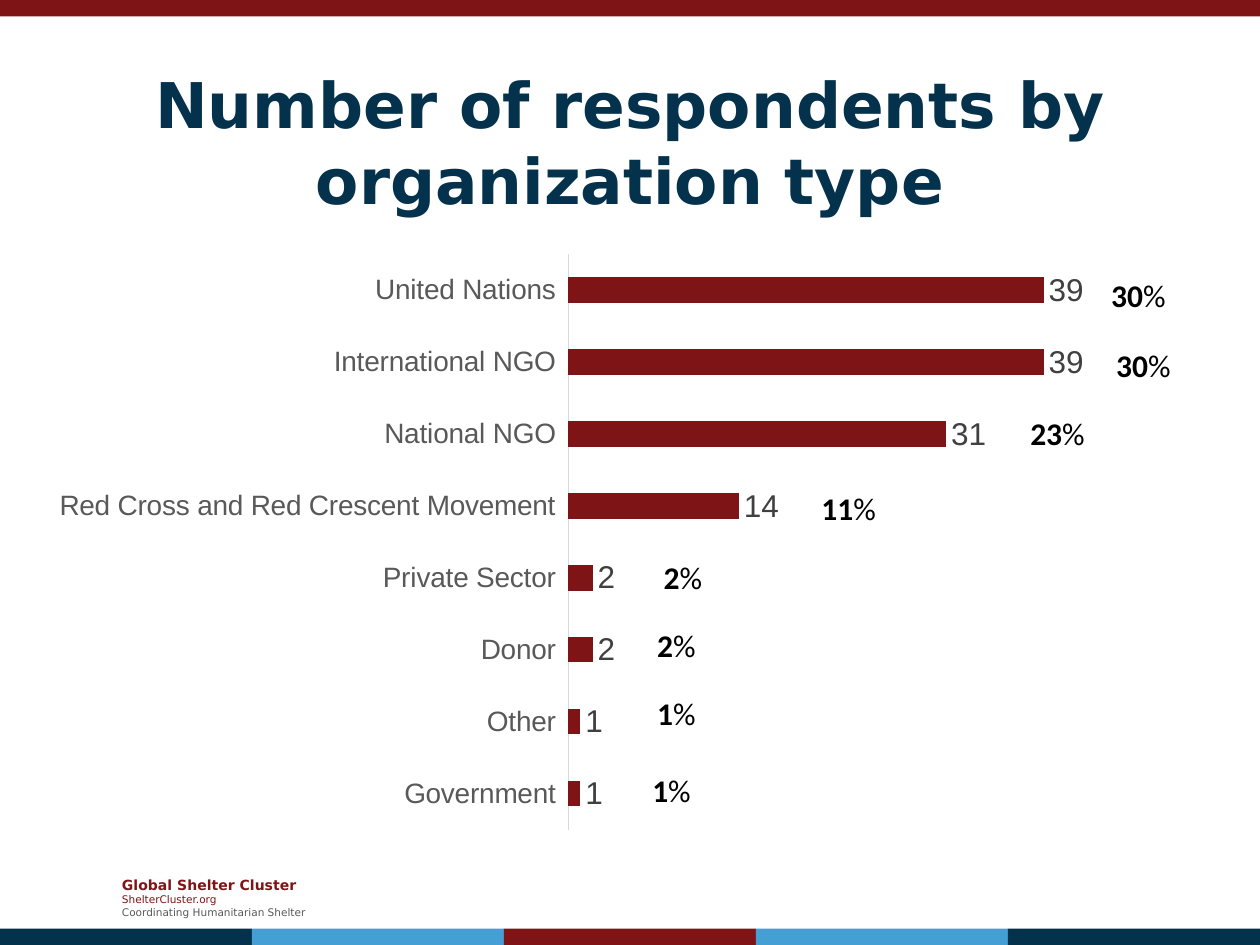
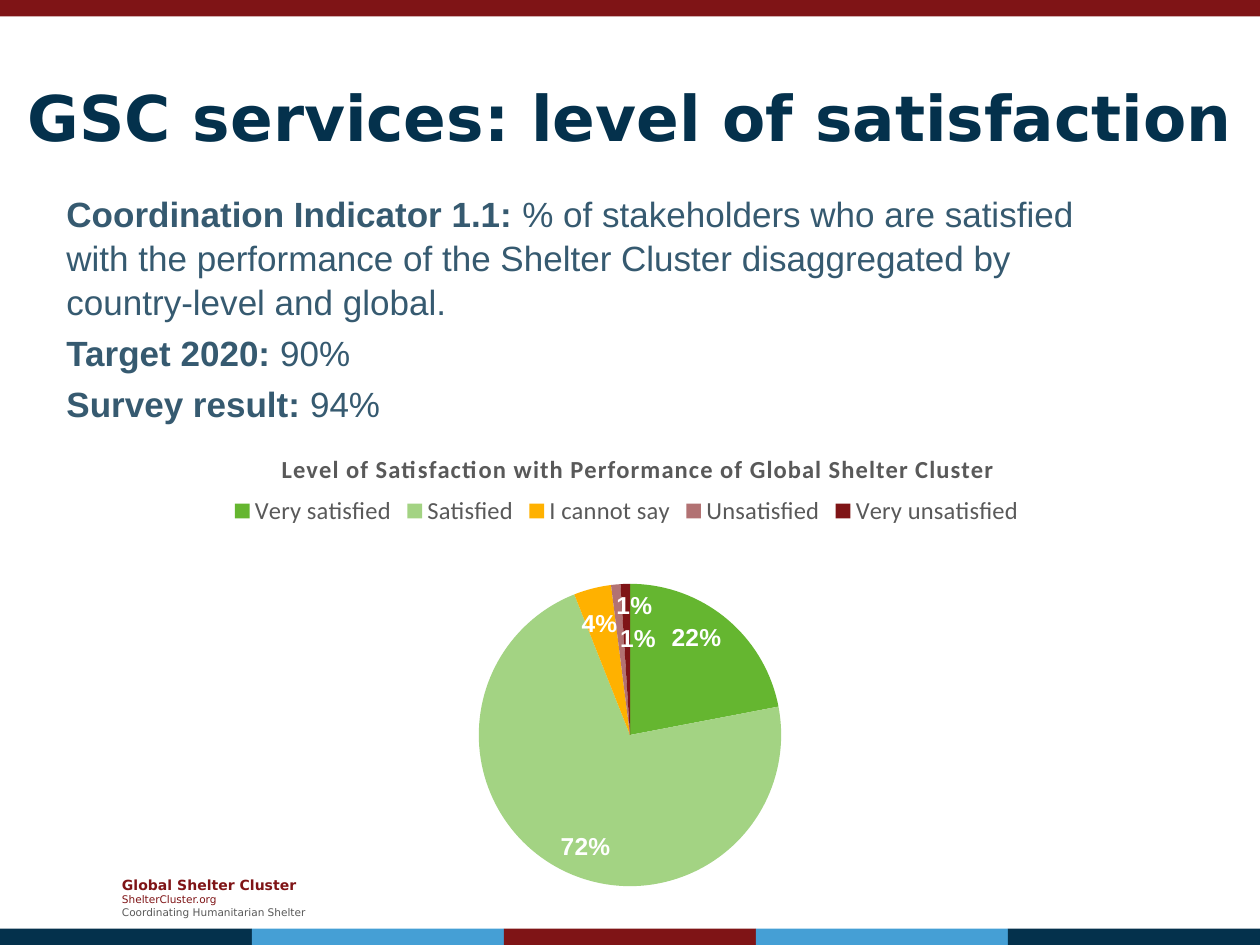
"""Build two survey result slides: respondents by type and level of satisfaction."""
from lxml import etree
from pptx import Presentation
from pptx.chart.data import CategoryChartData
from pptx.dml.color import RGBColor
from pptx.enum.chart import XL_CHART_TYPE, XL_LABEL_POSITION, XL_LEGEND_POSITION, XL_TICK_LABEL_POSITION, XL_TICK_MARK
from pptx.enum.shapes import MSO_SHAPE
from pptx.enum.text import MSO_ANCHOR, PP_ALIGN
from pptx.oxml.ns import qn
from pptx.util import Cm, Pt

BAR, PIE = XL_CHART_TYPE.BAR_CLUSTERED, XL_CHART_TYPE.PIE
OUT_END, IN_END = XL_LABEL_POSITION.OUTSIDE_END, XL_LABEL_POSITION.INSIDE_END
LEGEND_TOP = XL_LEGEND_POSITION.TOP
NO_TICK, LOW = XL_TICK_MARK.NONE, XL_TICK_LABEL_POSITION.LOW
RECT = MSO_SHAPE.RECTANGLE
TOP, MIDDLE = MSO_ANCHOR.TOP, MSO_ANCHOR.MIDDLE
LEFT, CENTER = PP_ALIGN.LEFT, PP_ALIGN.CENTER

COLORS = {
    "red": "7F1416", "navy": "04314C", "sky": "459FD5", "slate": "365A70",
    "grey": "595959", "dark": "404040", "rule": "D9D9D9", "black": "000000",
    "white": "FFFFFF", "green": "65B630", "mint": "A3D383", "amber": "FFB100",
    "rose": "B27273",
}
RGB = {name: RGBColor.from_string(value) for name, value in COLORS.items()}

TITLE = {"name": "DejaVu Sans", "size": Pt(36), "bold": True, "color": "navy"}
ORG = {"name": "DejaVu Sans", "size": Pt(8), "bold": True, "color": "red"}
SITE = {**ORG, "size": Pt(6), "bold": False}
MOTTO = {**SITE, "color": "grey"}
BODY = {"name": "Arial", "size": Pt(20), "bold": False, "color": "slate"}
LEAD = {**BODY, "bold": True}
SHARE = {"name": "Calibri", "size": Pt(18), "bold": True, "color": "black"}
SIGN = {**SHARE, "bold": False}
CHART = {"name": "Calibri", "size": Pt(10), "color": "black"}
CATEGORY = {"name": "Arial", "size": Pt(16), "color": "grey"}
COUNT = {"name": "Arial", "size": Pt(18), "color": "dark"}
LEGEND = {"name": "Calibri", "size": Pt(14), "color": "grey"}
CAPTION = {**LEGEND, "bold": True}
SLICE = {"name": "Arial", "size": Pt(14), "bold": True, "color": "white"}


def style(font, fmt):
    for key, value in fmt.items():
        if key == "color":
            font.color.rgb = RGB[value]
        else:
            setattr(font, key, value)


def place(element, index, **values):
    for old in element.findall(qn("c:layout")):
        element.remove(old)
    layout = etree.Element(qn("c:layout"))
    manual = etree.SubElement(layout, qn("c:manualLayout"))
    for key, value in values.items():
        etree.SubElement(manual, qn(f"c:{key}")).set("val", str(value))
    element.insert(index, layout)


prs = Presentation()
prs.slide_width, prs.slide_height = Cm(25.4), Cm(19.05)
respondents, satisfaction = [prs.slides.add_slide(prs.slide_layouts[6]) for _ in range(2)]

band = 25.4 / 5
bars = [(0, 0, 25.4, "red")]
bars += [(i * band, 18.72, band, color)
         for i, color in enumerate(["navy", "sky", "red", "sky", "navy"])]
for s in prs.slides:
    for x, y, w, color in bars:
        sp = s.shapes.add_shape(RECT, Cm(x), Cm(y), Cm(w), Cm(0.33))
        sp.shadow.inherit = False
        sp.fill.solid()
        sp.fill.fore_color.rgb = RGB[color]
        sp.line.fill.background()

data = CategoryChartData()
data.categories = ["Government", "Other", "Donor", "Private Sector",
                   "Red Cross and Red Crescent Movement", "National NGO",
                   "International NGO", "United Nations"]
data.add_series("Series 1", [1, 1, 2, 2, 14, 31, 39, 39])
chart = respondents.shapes.add_chart(BAR, Cm(0.84), Cm(4.88), Cm(22.12), Cm(12.09), data).chart
style(chart.font, CHART)
chart.has_legend = chart.has_title = False
plot = chart.plots[0]
plot.gap_width, plot.vary_by_categories = 182, False
axis = chart.value_axis
axis.visible = axis.has_major_gridlines = False
axis.minimum_scale, axis.maximum_scale = 0, 45
axis = chart.category_axis
axis.major_tick_mark = axis.minor_tick_mark = NO_TICK
axis.tick_label_position = LOW
axis.format.line.color.rgb = RGB["rule"]
axis.format.line.width = Pt(0.75)
style(axis.tick_labels.font, CATEGORY)
series = plot.series[0]
series.format.fill.solid()
series.format.fill.fore_color.rgb = RGB["red"]
labels = series.data_labels
labels.show_value, labels.position = True, OUT_END
style(labels.font, COUNT)
place(chart.element.xpath(".//c:plotArea")[0], 0, layoutTarget="inner",
      xMode="edge", yMode="edge", x=0.48, y=0.02, w=0.5, h=0.96)

data = CategoryChartData()
data.categories = ["Very satisfied", "Satisfied", "I cannot say", "Unsatisfied", "Very unsatisfied"]
data.add_series("Series 1", [22, 72, 4, 1, 1])
chart = satisfaction.shapes.add_chart(PIE, 0, Cm(8.53), Cm(25.4), Cm(9.75), data).chart
style(chart.font, CHART)
chart.has_title = chart.has_legend = True
p = chart.chart_title.text_frame.paragraphs[0]
r = p.add_run()
r.text = "Level of Satisfaction with Performance of Global Shelter Cluster"
style(r.font, CAPTION)
r.font._element.set("spc", "50")
chart.legend.position, chart.legend.include_in_layout = LEGEND_TOP, False
style(chart.legend.font, LEGEND)
plot = chart.plots[0]
plot.vary_by_categories = True
series = plot.series[0]
for i, color in enumerate(["green", "mint", "amber", "rose", "red"]):
    fill = series.points[i].format.fill
    fill.solid()
    fill.fore_color.rgb = RGB[color]
labels = series.data_labels
labels.show_value, labels.show_percentage = False, True
labels.number_format, labels.number_format_is_linked = "0%", False
labels.position = IN_END
style(labels.font, SLICE)
for i in (2, 4):
    label = series.points[i].data_label
    style(label.font, SLICE)
    label.position = IN_END
for dlbl, (x, y) in zip(chart.element.xpath(".//c:dLbl"), [(-0.01, 0.03), (0.01, 0.07)]):
    dlbl.find(qn("c:showVal")).set("val", "0")
    dlbl.find(qn("c:showPercent")).set("val", "1")
    place(dlbl, 1, x=x, y=y)
for tag, index, x, y in [("title", 1, 0.22, 0.05), ("legend", 1, 0.18, 0.14)]:
    place(chart.element.xpath(f".//c:{tag}")[0], index, xMode="edge", yMode="edge", x=x, y=y)
place(chart.element.xpath(".//c:plotArea")[0], 0, layoutTarget="inner",
      xMode="edge", yMode="edge", x=0.38, y=0.33, w=0.24, h=0.63)

footer = [[("Global Shelter Cluster", ORG)], [("ShelterCluster.org", SITE)],
          [("Coordinating Humanitarian Shelter", MOTTO)]]
indicator = [
    [("Coordination Indicator 1.1: ", LEAD),
     ("% of stakeholders who are satisfied with the performance of the Shelter Cluster "
      "disaggregated by country-level and global.", BODY)],
    [("Target 2020:", LEAD), (" 90%", BODY)],
    [("Survey result: ", LEAD), ("94%", BODY)],
]
shares = [(22.15, 5.44, 30), (22.25, 6.86, 30), (20.52, 8.23, 23), (16.31, 9.73, 11),
          (13.13, 11.13, 2), (13, 12.5, 2), (13, 13.87, 1), (12.9, 15.42, 1)]

texts = [(s, (2.21, 17.53, 4.39, 1.12), MIDDLE, LEFT, 0, 1, footer) for s in prs.slides]
texts += [
    (respondents, (1.27, 0.48, 22.86, 4.75), MIDDLE, CENTER, 0, 1,
     [[("Number of respondents by organization type", TITLE)]]),
    (satisfaction, (0, 0.76, 25.4, 3.18), MIDDLE, CENTER, 0, 1,
     [[("GSC services: level of satisfaction", TITLE)]]),
    (satisfaction, (1.09, 3.71, 21.8, 14.02), TOP, LEFT, 4, 1.05, indicator),
]
texts += [(respondents, (x, y, 1.8, 1.02), TOP, LEFT, 0, 1, [[(str(n), SHARE), ("%", SIGN)]])
          for x, y, n in shares]

for s, box, anchor, align, gap, spacing, paragraphs in texts:
    tf = s.shapes.add_textbox(*map(Cm, box)).text_frame
    tf.word_wrap, tf.vertical_anchor = True, anchor
    for i, runs in enumerate(paragraphs):
        p = tf.add_paragraph() if i else tf.paragraphs[0]
        p.alignment, p.line_spacing = align, spacing
        p.space_before = Pt(gap if i else 0)
        for text, fmt in runs:
            r = p.add_run()
            r.text = text
            style(r.font, fmt)

prs.save("out.pptx")
